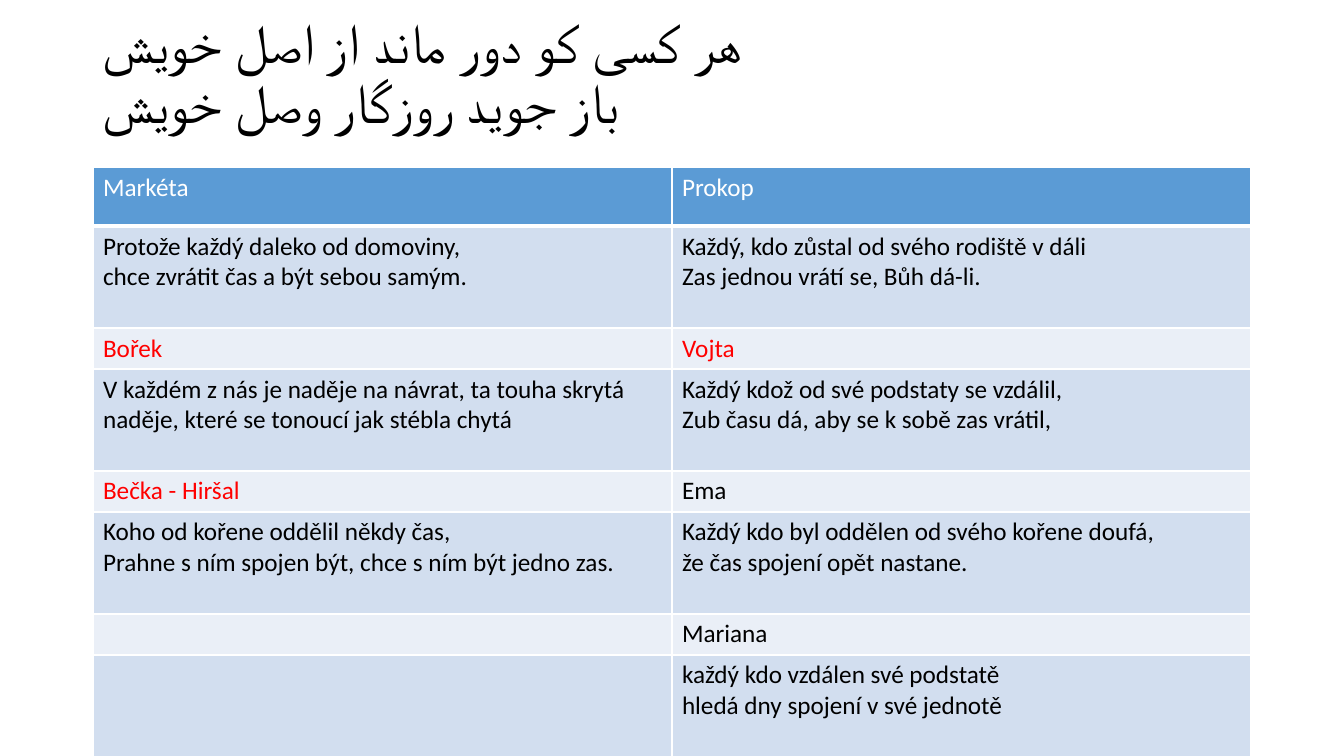
"""Build a slide comparing Czech translations of a Persian couplet."""
from lxml import etree
from pptx import Presentation
from pptx.dml.color import RGBColor
from pptx.enum.text import MSO_ANCHOR, PP_ALIGN
from pptx.oxml.ns import qn
from pptx.util import Emu, Pt

MIDDLE = MSO_ANCHOR.MIDDLE
LEFT = PP_ALIGN.LEFT

BLACK = RGBColor(0x00, 0x00, 0x00)
WHITE = RGBColor(0xFF, 0xFF, 0xFF)
RED = RGBColor(0xFF, 0x00, 0x00)
HEADER_BLUE = RGBColor(0x5B, 0x9B, 0xD5)
VERSE_BLUE = RGBColor(0xD2, 0xDE, 0xEF)
NAME_BLUE = RGBColor(0xEA, 0xEF, 0xF7)

FONT = "Calibri"
COUPLET = "هر کسی کو دور ماند از اصل خویش\vباز جوید روزگار وصل خویش"
ROWS = [
    ("Markéta", "Prokop"),
    ("Protože každý daleko od domoviny, \vchce zvrátit čas a být sebou samým.",
     "Každý, kdo zůstal od svého rodiště v dáli\nZas jednou vrátí se, Bůh dá-li."),
    ("Bořek", "Vojta"),
    ("V každém z nás je naděje na návrat, ta touha skrytá \vnaděje, které se tonoucí jak stébla chytá",
     "Každý kdož od své podstaty se vzdálil,\nZub času dá, aby se k sobě zas vrátil,"),
    ("Bečka - Hiršal", "Ema"),
    ("Koho od kořene oddělil někdy čas,\nPrahne s ním spojen být, chce s ním být jedno zas.",
     "Každý kdo byl oddělen od svého kořene doufá,\nže čas spojení opět nastane."),
    ("", "Mariana"),
    ("", "každý kdo vzdálen své podstatě\nhledá dny spojení v své jednotě"),
]
RED_NAMES = {"Bořek", "Vojta", "Bečka - Hiršal"}

SLIDE_SIZE = (1344, 756)
TITLE_BOX = (93, 10, 1159, 131)
TABLE_LEFT, TABLE_TOP, COLUMN_WIDTH = 93, 167, 579
HEADER_HEIGHT, NAME_HEIGHT, VERSE_HEIGHT = 59, 41, 102


def px(length):
    """Turn pixels into EMU."""
    return Emu(round(length * 914400 / 100.8))


def row_look(index):
    """Return the height and fill of a table row."""
    if index == 0:
        return HEADER_HEIGHT, HEADER_BLUE
    return (VERSE_HEIGHT, VERSE_BLUE) if index % 2 else (NAME_HEIGHT, NAME_BLUE)


def set_font(paragraph, size, color):
    """Give a whole paragraph one font."""
    paragraph.font.name = FONT
    paragraph.font.size = Pt(size)
    paragraph.font.color.rgb = color


def add_borders(cell, bottom_width):
    """Draw white borders around a cell."""
    properties = cell._tc.get_or_add_tcPr()
    for side, width in (("lnL", 1), ("lnR", 1), ("lnT", 1), ("lnB", bottom_width)):
        line = etree.SubElement(properties, qn(f"a:{side}"), w=str(Pt(width)))
        fill = etree.SubElement(line, qn("a:solidFill"))
        etree.SubElement(fill, qn("a:srgbClr"), val=str(WHITE))


def add_title(slide):
    """Place the Persian couplet."""
    frame = slide.shapes.add_textbox(*map(px, TITLE_BOX)).text_frame
    frame.word_wrap = True
    frame.vertical_anchor = MIDDLE
    paragraph = frame.paragraphs[0]
    paragraph.text = COUPLET
    paragraph.alignment = LEFT
    paragraph.line_spacing = 0.9
    paragraph._p.get_or_add_pPr().set("rtl", "1")
    set_font(paragraph, 39.6, BLACK)


def add_translations(slide):
    """Place the table of translators and verses."""
    looks = [row_look(index) for index in range(len(ROWS))]
    columns = len(ROWS[0])
    height = sum(row_height for row_height, _ in looks)
    table = slide.shapes.add_table(
        len(ROWS), columns, px(TABLE_LEFT), px(TABLE_TOP),
        px(columns * COLUMN_WIDTH), px(height)).table
    table.first_row = False
    table.horz_banding = False
    for column in table.columns:
        column.width = px(COLUMN_WIDTH)
    for index, (texts, (row_height, fill)) in enumerate(zip(ROWS, looks)):
        table.rows[index].height = px(row_height)
        for cell, text in zip(table.rows[index].cells, texts):
            add_borders(cell, 1 if index else 3)
            cell.fill.solid()
            cell.fill.fore_color.rgb = fill
            cell.text = text
            color = RED if text in RED_NAMES else BLACK if index else WHITE
            for paragraph in cell.text_frame.paragraphs:
                set_font(paragraph, 18, color)


def main():
    """Create and save the presentation."""
    presentation = Presentation()
    presentation.slide_width, presentation.slide_height = map(px, SLIDE_SIZE)
    slide = presentation.slides.add_slide(presentation.slide_layouts[6])
    add_title(slide)
    add_translations(slide)
    presentation.save("out.pptx")


if __name__ == "__main__":
    main()
